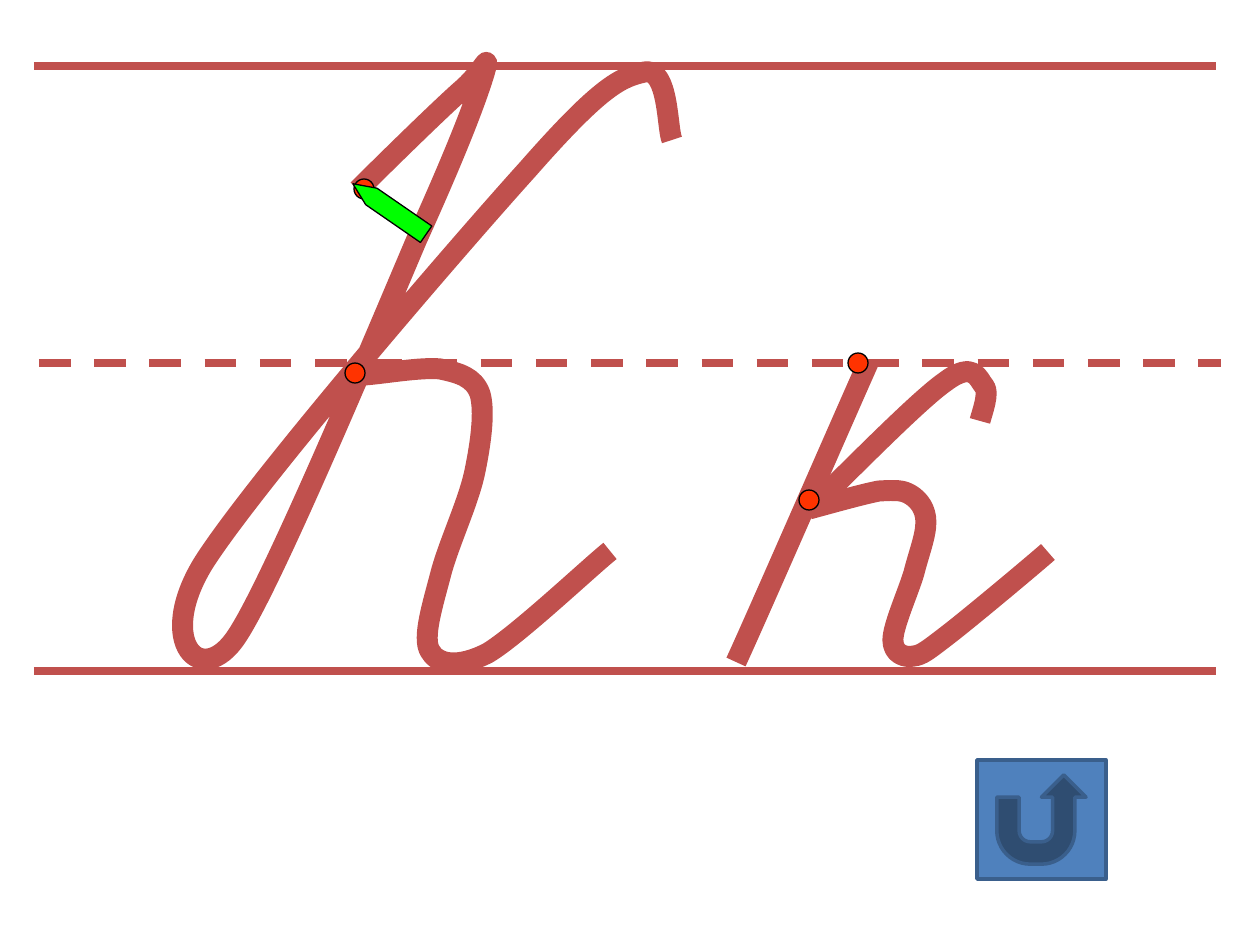
from dataclasses import dataclass

from lxml.etree import SubElement
from pptx import Presentation
from pptx.dml.color import RGBColor as RGB
from pptx.enum.dml import MSO_LINE
from pptx.enum.shapes import MSO_CONNECTOR, MSO_SHAPE as SHAPE
from pptx.oxml.ns import qn
from pptx.util import Pt

PX = 914400 / 126


@dataclass(frozen=True)
class Theme:
    ink: RGB = RGB(0xC0, 0x50, 0x4D)
    dot: RGB = RGB(0xFF, 0x33, 0x00)
    pencil: RGB = RGB(0x00, 0xFF, 0x00)
    outline: RGB = RGB(0x00, 0x00, 0x00)
    button: RGB = RGB(0x4F, 0x81, 0xBD)
    button_edge: RGB = RGB(0x3A, 0x5F, 0x8C)
    stroke_pt: float = 12
    rule_pt: float = 4.5
    outline_pt: float = 0.75
    button_pt: float = 2


T = Theme()
DOT = 20

CAPITAL_STROKES = [
    [(517, 91), (512, 80), (514, 19), (490, 23), (466, 28), (446, 37), (373, 120),
     (299, 202), (97, 437), (48, 515), (0, 594), (47, 641), (82, 587),
     (118, 533), (222, 284), (262, 190), (304, 97), (321, 51), (329, 25),
     (336, 0), (330, 20), (309, 39), (287, 58), (224, 120), (203, 141)],
    [(455, 502), (435, 518), (363, 586), (333, 604), (302, 620), (282, 615), (275, 602),
     (267, 589), (278, 555), (286, 524), (294, 494), (314, 452), (320, 422),
     (326, 393), (330, 362), (325, 345), (319, 328), (304, 324), (285, 320),
     (266, 318), (226, 325), (210, 326)],
]
CAPITAL_DOTS = [(190, 314), (199, 130)]

SMALL_STROKES = [
    [(0, 309), (23, 259), (104, 73), (132, 10)],
    [(312, 199), (296, 213), (235, 264), (213, 281), (191, 298), (186, 302), (178, 303),
     (169, 305), (157, 301), (157, 287), (157, 273), (172, 240), (178, 220),
     (183, 200), (190, 183), (190, 169), (190, 156), (183, 147), (175, 142),
     (167, 137), (161, 137), (143, 138), (127, 141), (88, 152), (73, 156)],
    [(73, 157), (96, 136), (180, 49), (209, 29), (238, 7), (242, 26), (248, 33),
     (254, 39), (246, 60), (244, 68)],
]
SMALL_DOTS = [(112, 0), (63, 137)]


def px(*values):
    return [round(v * PX) for v in values]


def set_line(shape, color, width):
    shape.line.color.rgb = color
    shape.line.width = Pt(width)


def add_preset(shapes, kind, box, fill, edge, width):
    sp = shapes.add_shape(kind, *px(*box))
    sp.shadow.inherit = False
    sp.fill.solid()
    sp.fill.fore_color.rgb = fill
    set_line(sp, edge, width)
    return sp


def add_curve(shapes, x, y, points):
    builder = shapes.build_freeform(*points[0], scale=PX)
    builder.add_line_segments(points[1:], close=False)
    sp = builder.convert_to_shape(*px(x, y))
    sp.shadow.inherit = False
    sp.fill.background()
    set_line(sp, T.ink, T.stroke_pt)
    outline = next(sp._element.iter(qn("a:path")))
    segments = outline.findall(qn("a:lnTo"))
    for i in range(0, len(segments), 3):
        bezier = SubElement(outline, qn("a:cubicBezTo"))
        for segment in segments[i:i + 3]:
            bezier.append(segment[0])
            outline.remove(segment)


def add_ruling(shapes, box):
    x, y, w, h = box
    for dx, dy, dash in ((0, 0, None), (5, 297, MSO_LINE.DASH), (0, h, None)):
        line = shapes.add_connector(
            MSO_CONNECTOR.STRAIGHT, *px(x + dx, y + dy, x + dx + w, y + dy))
        set_line(line, T.ink, T.rule_pt)
        if dash:
            line.line.dash_style = dash
        SubElement(line._element.spPr, qn("a:effectLst"))


def add_letter(shapes, origin, strokes, dots):
    x, y = origin
    for points in strokes:
        add_curve(shapes, x, y, points)
    for dx, dy in dots:
        add_preset(shapes, SHAPE.FLOWCHART_CONNECTOR, (x + dx, y + dy, DOT, DOT),
                   T.dot, T.outline, T.outline_pt)


def add_pencil(shapes, box):
    sp = add_preset(shapes, SHAPE.PENTAGON, box, T.pencil, T.outline, T.outline_pt)
    sp.adjustments[0] = 1.12
    sp.rotation = 214.6


def add_return_button(shapes, box):
    add_preset(shapes, SHAPE.ACTION_BUTTON_RETURN, box,
               T.button, T.button_edge, T.button_pt)


def main():
    prs = Presentation()
    prs.slide_width, prs.slide_height = px(1260, 945)
    s = prs.slides.add_slide(prs.slide_layouts[6])
    add_ruling(s.shapes.add_group_shape().shapes, (34, 66, 1182, 605))
    add_letter(s.shapes.add_group_shape().shapes, (155, 49), CAPITAL_STROKES, CAPITAL_DOTS)
    add_letter(s.shapes, (736, 353), SMALL_STROKES, SMALL_DOTS)
    add_pencil(s.shapes, (345, 199, 89, 20))
    add_return_button(s.shapes, (977, 760, 129, 119))
    prs.save("out.pptx")


if __name__ == "__main__":
    main()
